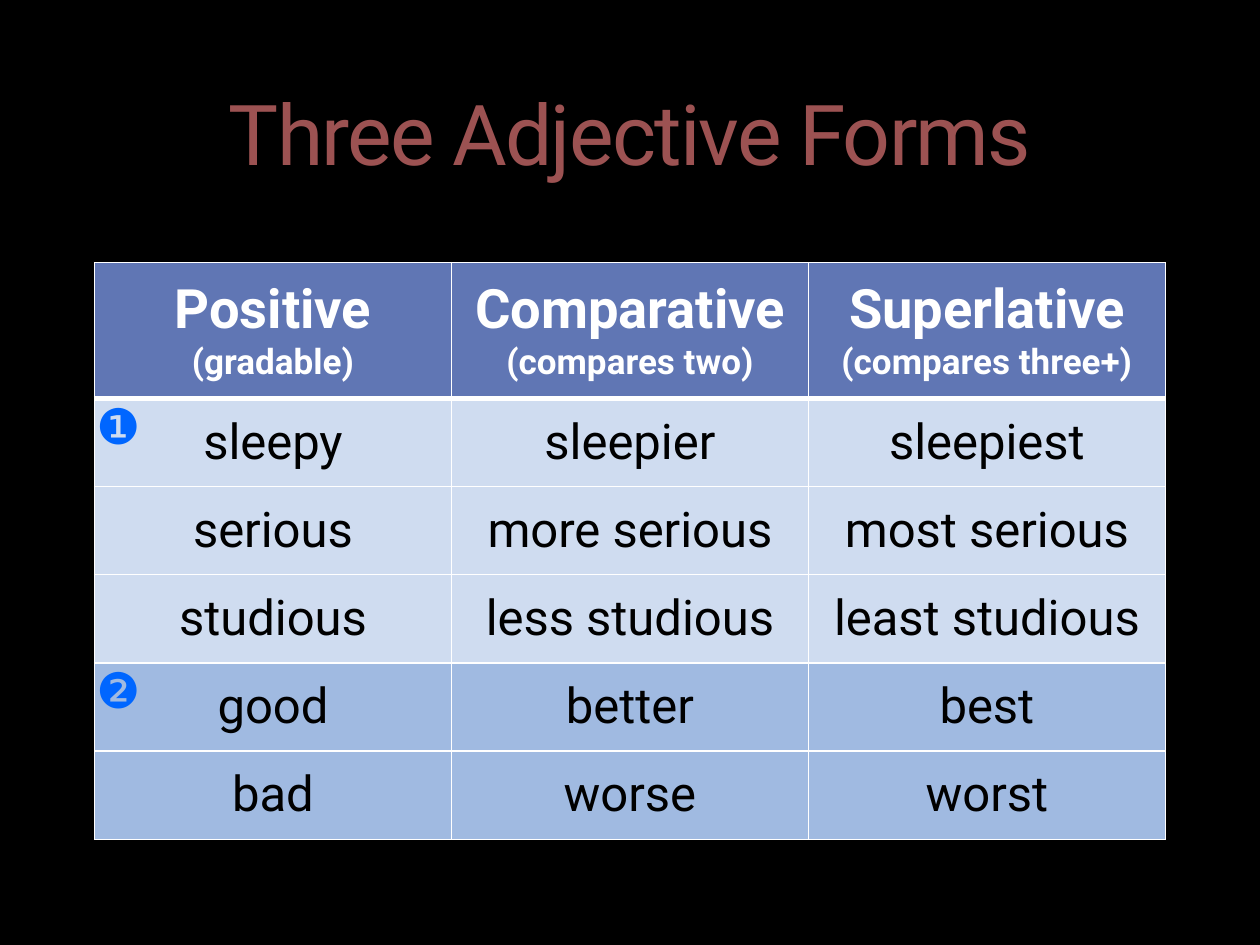
from lxml import etree
from pptx import Presentation
from pptx.dml.color import RGBColor
from pptx.enum.text import MSO_ANCHOR, PP_ALIGN
from pptx.oxml.ns import qn
from pptx.util import Pt

CENTER, LEFT = PP_ALIGN.CENTER, PP_ALIGN.LEFT
MIDDLE, BOTTOM, TOP = MSO_ANCHOR.MIDDLE, MSO_ANCHOR.BOTTOM, MSO_ANCHOR.TOP
FONT = "Roboto"
COLORS = {
    "background": "000000", "title": "9C5252", "outline": "294E85",
    "header": "6076B4", "regular": "CFDCF0", "irregular": "A0BAE1",
    "white": "FFFFFF", "black": "000000", "badge": "0066FF",
}

# Content
TITLE = "Three Adjective Forms"
HEADERS = [
    ("Positive", "(gradable)"),
    ("Comparative", "(compares two)"),
    ("Superlative", "(compares three+)"),
]
GROUPS = [
    ("❶", "regular", [
        ("sleepy", "sleepier", "sleepiest"),
        ("serious", "more serious", "most serious"),
        ("studious", "less studious", "least studious"),
    ]),
    ("❷", "irregular", [
        ("good", "better", "best"),
        ("bad", "worse", "worst"),
    ]),
]

# Layout
TABLE_LEFT, TABLE_TOP, TABLE_WIDTH = 54, 150, 612
HEADER_HEIGHT, ROW_HEIGHT = 77.6, 50.4
BADGE_LEFT, BADGE_RISE, BADGE_WIDTH, BADGE_HEIGHT = 48, 5.2, 48, 41


def color(name):
    return RGBColor.from_string(COLORS[name])


def write(frame, lines, sizes, text_color, align=CENTER, anchor=MIDDLE, bold=False):
    frame.text = "\n".join(lines)
    frame.word_wrap = True
    frame.vertical_anchor = anchor
    for para, size in zip(frame.paragraphs, sizes):
        para.alignment = align
        for span in para.runs:
            span.font.name = FONT
            span.font.size = Pt(size)
            span.font.bold = bold
            span.font.color.rgb = color(text_color)


def add_text(page, left, top, width, height, text, size, text_color, align, anchor):
    box = page.shapes.add_textbox(Pt(left), Pt(top), Pt(width), Pt(height))
    write(box.text_frame, [text], [size], text_color, align, anchor)
    return box


def add_solid_line(parent, tag, width, name):
    line = etree.SubElement(parent, qn(tag), w=str(Pt(width)))
    fill = etree.SubElement(line, qn("a:solidFill"))
    etree.SubElement(fill, qn("a:srgbClr"), val=COLORS[name])
    return line


def style_cell(cell, fill_name, top_width=1, bottom_width=1):
    properties = cell._tc.get_or_add_tcPr()
    widths = {"a:lnL": 1, "a:lnR": 1, "a:lnT": top_width, "a:lnB": bottom_width}
    for tag, width in widths.items():
        add_solid_line(properties, tag, width, "white")
    cell.fill.solid()
    cell.fill.fore_color.rgb = color(fill_name)


deck = Presentation()
deck.slide_width, deck.slide_height = Pt(720), Pt(540)
page = deck.slides.add_slide(deck.slide_layouts[6])
page.background.fill.solid()
page.background.fill.fore_color.rgb = color("background")

# Table with its header row
row_count = 1 + sum(len(rows) for _, _, rows in GROUPS)
table_height = HEADER_HEIGHT + (row_count - 1) * ROW_HEIGHT
table = page.shapes.add_table(
    row_count, len(HEADERS), Pt(TABLE_LEFT), Pt(TABLE_TOP),
    Pt(TABLE_WIDTH), Pt(table_height)).table
for index, row in enumerate(table.rows):
    row.height = Pt(ROW_HEIGHT if index else HEADER_HEIGHT)
for cell, lines in zip(table.rows[0].cells, HEADERS):
    style_cell(cell, "header", bottom_width=3)
    write(cell.text_frame, lines, [31, 20], "white", bold=True)
    cell.vertical_anchor = MIDDLE

# Title
title = add_text(page, 24, 12, 672, 96, TITLE, 48, "title", CENTER, BOTTOM)
title_properties = title.text_frame.paragraphs[0].runs[0].font._element
title_properties.set("spc", "-100")
outline = add_solid_line(title_properties, "a:ln", 0.25, "outline")
etree.SubElement(outline[0][0], qn("a:alpha"), val="25000")
title_properties.insert(0, outline)

# Body rows, with a numbered badge at the start of each group
row_index = 1
for badge, fill_name, rows in GROUPS:
    badge_top = TABLE_TOP + HEADER_HEIGHT + (row_index - 1) * ROW_HEIGHT - BADGE_RISE
    add_text(page, BADGE_LEFT, badge_top, BADGE_WIDTH, BADGE_HEIGHT,
             badge, 28, "badge", LEFT, TOP)
    for words in rows:
        for cell, word in zip(table.rows[row_index].cells, words):
            style_cell(cell, fill_name, top_width=3 if row_index == 1 else 1)
            write(cell.text_frame, [word], [28], "black")
            cell.vertical_anchor = MIDDLE
        row_index += 1

deck.save("out.pptx")
